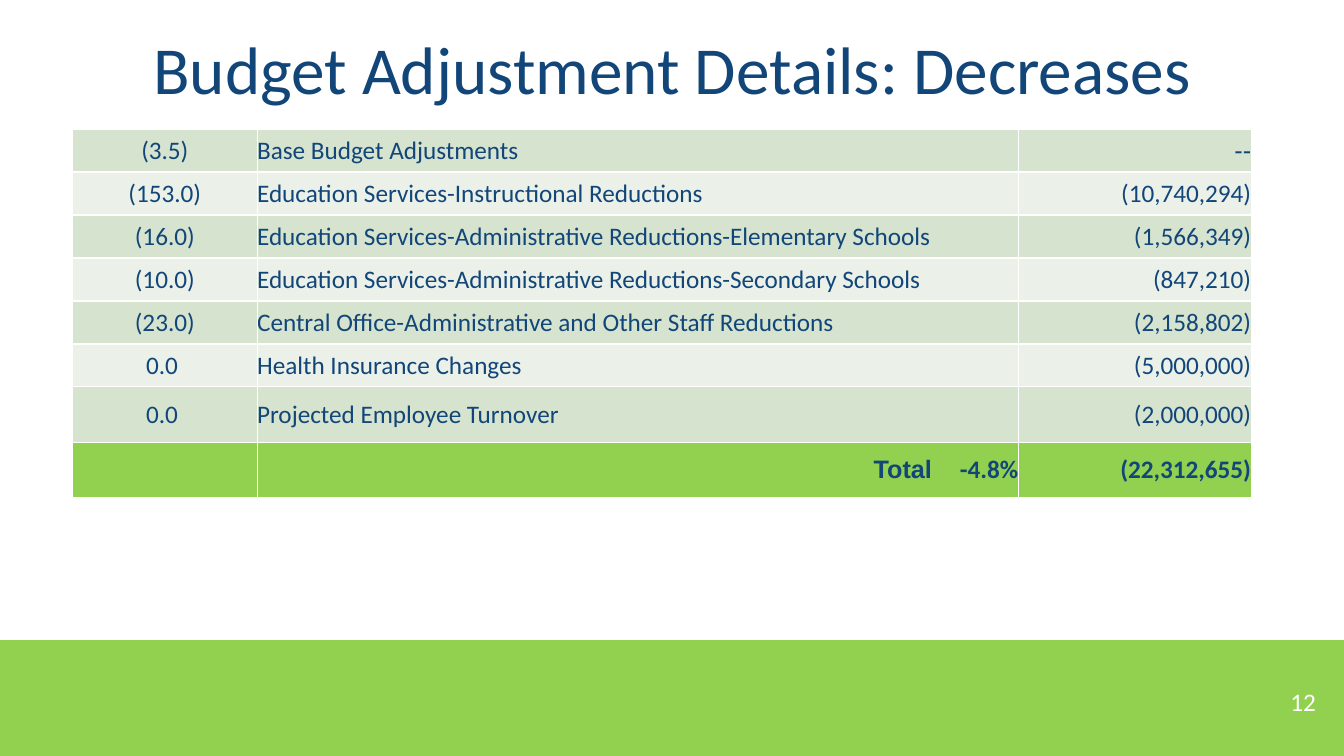
from dataclasses import dataclass

from lxml.etree import SubElement
from pptx import Presentation
from pptx.dml.color import RGBColor
from pptx.enum.shapes import MSO_SHAPE
from pptx.enum.text import MSO_ANCHOR, PP_ALIGN
from pptx.oxml.ns import qn
from pptx.util import Inches, Pt

# Content
TITLE = "Budget Adjustment Details: Decreases"
PAGE_NUMBER = "12"
ADJUSTMENTS = [
    ("(3.5)", "Base Budget Adjustments", "--"),
    ("(153.0)", "Education Services-Instructional Reductions", "(10,740,294)"),
    ("(16.0)", "Education Services-Administrative Reductions-Elementary Schools", "(1,566,349)"),
    ("(10.0)", "Education Services-Administrative Reductions-Secondary Schools", "(847,210)"),
    ("(23.0)", "Central Office-Administrative and Other Staff Reductions", "(2,158,802)"),
    ("0.0 ", "Health Insurance Changes", "(5,000,000)"),
    ("0.0 ", "Projected Employee Turnover", "(2,000,000)"),
]
TOTAL_LABEL, TOTAL_SHARE, TOTAL_AMOUNT = "Total", "-4.8%", "(22,312,655)"


@dataclass(frozen=True)
class Theme:
    navy: str = "124679"
    green: str = "92D050"
    white: str = "FFFFFF"
    bands: tuple = ("D5E3CF", "EBF1E9")
    font: str = "Calibri"
    accent_font: str = "Arial"
    title_size: int = 48
    body_size: int = 18


THEME = Theme()

# Layout in inches
WIDTH, HEIGHT = 13.33, 7.5
FOOTER_TOP = 6.35
TABLE_LEFT, TABLE_TOP = 0.72, 1.28
COLUMNS = (1.83, 7.55, 2.31)
ROWS = [2.56 / 6] * 6 + [0.55] * 2
ALIGNMENTS = (PP_ALIGN.CENTER, PP_ALIGN.LEFT, PP_ALIGN.RIGHT)


def add_text(para, text, size=THEME.body_size, color=THEME.navy, font=THEME.font,
             bold=False, align=None, tracking=None):
    """Append one formatted run to a paragraph."""
    if align is not None:
        para.alignment = align
    span = para.add_run()
    span.text = text
    span.font.name, span.font.size, span.font.bold = font, Pt(size), bold
    span.font.color.rgb = RGBColor.from_string(color)
    if tracking:
        span.font._element.set("spc", str(tracking * 100))


def add_box(page, left, top, width, height):
    """Add a wrapped, vertically centred text box and return its paragraph."""
    box = page.shapes.add_textbox(*map(Inches, (left, top, width, height)))
    box.text_frame.word_wrap = True
    box.text_frame.vertical_anchor = MSO_ANCHOR.MIDDLE
    return box.text_frame.paragraphs[0]


def style_cell(cell, fill):
    """Set margins, white borders and fill of a table cell."""
    cell.margin_left = cell.margin_right = cell.margin_top = cell.margin_bottom = 0
    cell.vertical_anchor = MSO_ANCHOR.MIDDLE
    properties = cell._tc.get_or_add_tcPr()
    for side in ("a:lnL", "a:lnR", "a:lnT", "a:lnB"):
        line = SubElement(properties, qn(side), w=str(Pt(1)))
        SubElement(SubElement(line, qn("a:solidFill")), qn("a:srgbClr"), val=THEME.white)
    cell.fill.solid()
    cell.fill.fore_color.rgb = RGBColor.from_string(fill)


def add_budget_table(page):
    frame = page.shapes.add_table(len(ROWS), len(COLUMNS), *map(
        Inches, (TABLE_LEFT, TABLE_TOP, sum(COLUMNS), sum(ROWS))))
    table = frame.table
    table.first_row = table.horz_banding = False
    for column, width in zip(table.columns, COLUMNS):
        column.width = Inches(width)
    for row, height in zip(table.rows, ROWS):
        row.height = Inches(height)

    # Adjustment rows in alternating bands
    for index, values in enumerate(ADJUSTMENTS):
        for cell, value, align in zip(table.rows[index].cells, values, ALIGNMENTS):
            style_cell(cell, THEME.bands[index % 2])
            font = THEME.accent_font if value == "--" else THEME.font
            add_text(cell.text_frame.paragraphs[0], value, font=font, align=align)

    # Total row, with a widened space before the percentage
    total_cells = list(table.rows[len(ADJUSTMENTS)].cells)
    for cell in total_cells:
        style_cell(cell, THEME.green)
    label, amount = (cell.text_frame.paragraphs[0] for cell in total_cells[1:])
    add_text(label, TOTAL_LABEL, font=THEME.accent_font, bold=True, align=PP_ALIGN.RIGHT)
    add_text(label, " ", font=THEME.accent_font, bold=True, tracking=15)
    add_text(label, TOTAL_SHARE, bold=True)
    add_text(amount, TOTAL_AMOUNT, bold=True, align=PP_ALIGN.RIGHT)


def main():
    deck = Presentation()
    deck.slide_width, deck.slide_height = Inches(WIDTH), Inches(HEIGHT)
    page = deck.slides.add_slide(deck.slide_layouts[6])

    # Footer band
    footer = page.shapes.add_shape(MSO_SHAPE.RECTANGLE, *map(
        Inches, (0, FOOTER_TOP, WIDTH, HEIGHT - FOOTER_TOP)))
    footer.shadow.inherit = False
    footer.fill.solid()
    footer.fill.fore_color.rgb = RGBColor.from_string(THEME.green)
    footer.line.fill.background()

    # Title and page number
    title = add_box(page, 0.92, 0, 11.5, 1.45)
    title.line_spacing = 0.9
    add_text(title, TITLE, size=THEME.title_size, align=PP_ALIGN.CENTER)
    number = add_box(page, 10.15, 6.76, 3, 0.4)
    add_text(number, PAGE_NUMBER, color=THEME.white, align=PP_ALIGN.RIGHT)

    add_budget_table(page)
    deck.save("out.pptx")


if __name__ == "__main__":
    main()
